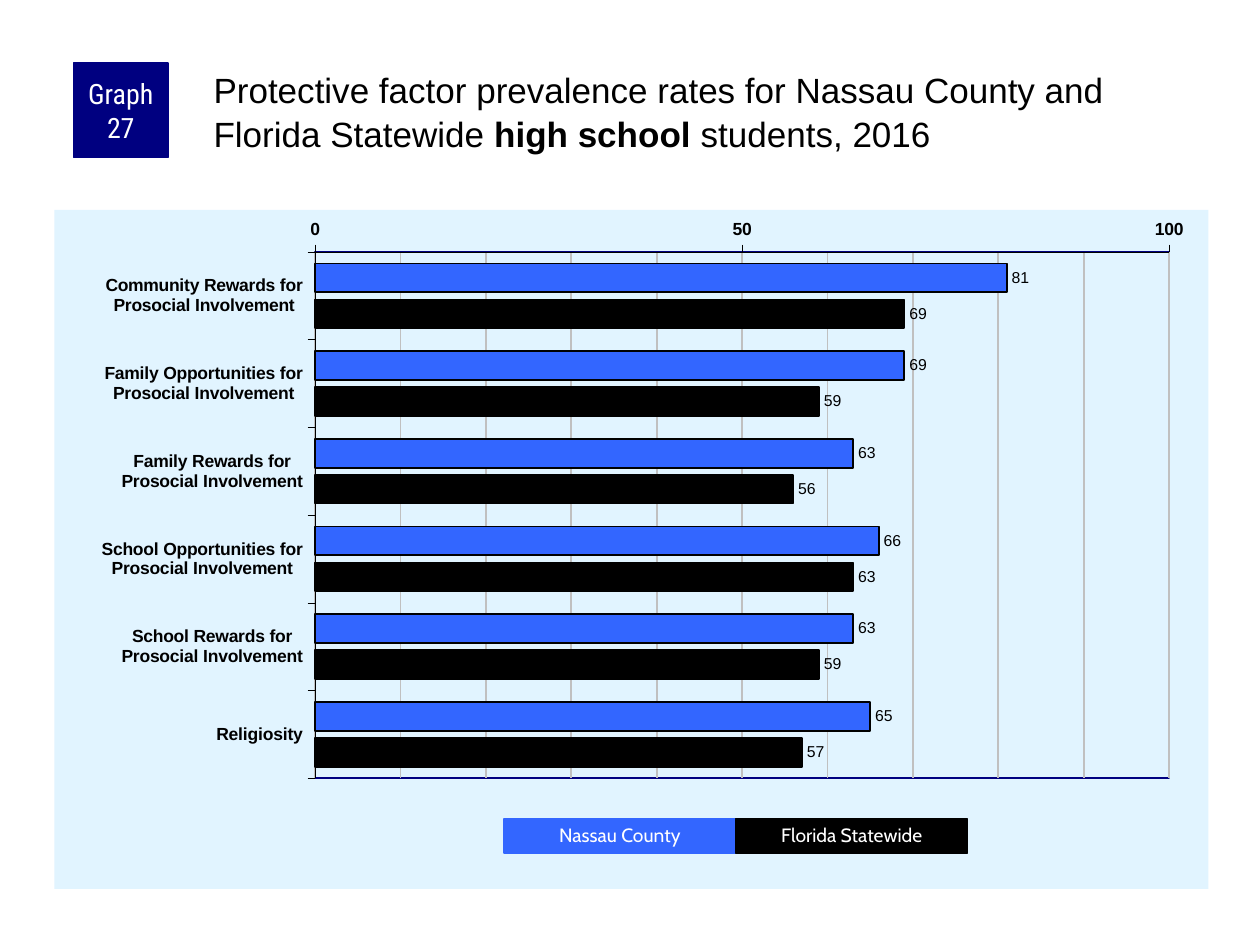
import copy
import pptx
import pptx.util
import pptx.oxml
import pptx.oxml.ns
import pptx.chart.data
import pptx.dml.color
import pptx.enum.chart
import pptx.enum.shapes
import pptx.enum.text
from dataclasses import dataclass

Pt = pptx.util.Pt
ALIGN = pptx.enum.text.PP_ALIGN
ANCHOR = pptx.enum.text.MSO_ANCHOR
CHART = pptx.enum.chart


@dataclass(frozen=True)
class Theme:
    navy: str = "000080"
    blue: str = "3366FF"
    black: str = "000000"
    white: str = "FFFFFF"
    panel: str = "E1F4FF"
    grid: str = "C0C0C0"
    body_font: str = "Arial"
    badge_font: str = "Roboto Condensed"
    legend_font: str = "Cabin"
    title_size: float = 20
    badge_size: float = 16
    legend_size: float = 11
    axis_size: float = 10
    label_size: float = 9


THEME = Theme()
CATEGORIES = [
    "Community Rewards for\nProsocial Involvement",
    "Family Opportunities for\nProsocial Involvement",
    "Family Rewards for\nProsocial Involvement",
    "School Opportunities for\nProsocial Involvement",
    "School Rewards for\nProsocial Involvement",
    "Religiosity",
]
SERIES = [
    ("Nassau County", THEME.blue, (81, 69, 63, 66, 63, 65)),
    ("Florida Statewide", THEME.black, (69, 59, 56, 63, 59, 57)),
]
PLOT = {"x": 0.226, "y": 0.062, "w": 0.74, "h": 0.775}  # shares of the chart box
C_NS = 'xmlns:c="http://schemas.openxmlformats.org/drawingml/2006/chart"'
A_NS = 'xmlns:a="http://schemas.openxmlformats.org/drawingml/2006/main"'


def rgb(color):
    return pptx.dml.color.RGBColor.from_string(color)


def set_values(target, values):
    for name, value in values.items():
        setattr(target, name, value)


def set_font(font, name, size, color, bold=False):
    set_values(font, {"name": name, "size": Pt(size), "bold": bold})
    font.color.rgb = rgb(color)


def set_fill(target, color):
    target.fill.solid()
    target.fill.fore_color.rgb = rgb(color)


def set_line(line, color, width):
    line.color.rgb = rgb(color)
    line.width = Pt(width)


def set_frame(frame, anchor, insets):
    values = dict(zip(("margin_left", "margin_top", "margin_right", "margin_bottom"), map(Pt, insets)))
    set_values(frame, {"word_wrap": True, "vertical_anchor": anchor, **values})


def add_title(slide, box, runs):
    title = slide.shapes.title
    set_values(title, dict(zip(("left", "top", "width", "height"), map(Pt, box))))
    set_frame(title.text_frame, ANCHOR.TOP, (2, 2, 0, 0))
    title.text_frame.auto_size = pptx.enum.text.MSO_AUTO_SIZE.NONE
    paragraph = title.text_frame.paragraphs[0]
    set_values(paragraph, {"alignment": ALIGN.LEFT, "line_spacing": 1.05})
    for text, bold in runs:
        run = paragraph.add_run()
        run.text = text
        set_font(run.font, THEME.body_font, THEME.title_size, THEME.black, bold)


def add_label_box(slide, box, text, fill, font, size, insets, line_spacing=1.0):
    """Add a filled rectangle with centred white text."""
    shape = slide.shapes.add_shape(pptx.enum.shapes.MSO_SHAPE.RECTANGLE, *map(Pt, box))
    shape.shadow.inherit = False
    set_fill(shape, fill)
    set_line(shape.line, fill, 0.75)
    set_frame(shape.text_frame, ANCHOR.MIDDLE, insets)
    paragraph = shape.text_frame.paragraphs[0]
    set_values(paragraph, {"text": text, "alignment": ALIGN.CENTER, "line_spacing": line_spacing})
    set_font(paragraph.runs[0].font, font, size, THEME.white)


def add_legend(slide, box):
    left, top, width, height = box
    key_width = width / len(SERIES)
    for index, (name, color, _) in enumerate(SERIES):
        key_box = (left + index * key_width, top, key_width, height)
        add_label_box(slide, key_box, name, color, THEME.legend_font, THEME.legend_size,
                      (7.2, 3.6, 7.2, 3.6), 0.9)


def set_chart_areas(chart):
    """Fill the chart panel, outline the plot and fix the plot's position."""
    chart_part = chart._chartSpace.chart
    chart_part.addnext(pptx.oxml.parse_xml(
        f'<c:spPr {C_NS} {A_NS}><a:solidFill><a:srgbClr val="{THEME.panel}"/></a:solidFill>'
        '<a:ln><a:noFill/></a:ln></c:spPr>'))
    plot_area = chart_part.plotArea
    for layout in plot_area.findall(pptx.oxml.ns.qn("c:layout")):
        plot_area.remove(layout)
    sizes = "".join(f'<c:{key} val="{value}"/>' for key, value in PLOT.items())
    plot_area.insert(0, pptx.oxml.parse_xml(
        f'<c:layout {C_NS}><c:manualLayout><c:layoutTarget val="inner"/>'
        f'<c:xMode val="edge"/><c:yMode val="edge"/>{sizes}</c:manualLayout></c:layout>'))
    plot_area.append(pptx.oxml.parse_xml(
        f'<c:spPr {C_NS} {A_NS}><a:noFill/><a:ln w="{Pt(1)}"><a:solidFill>'
        f'<a:srgbClr val="{THEME.navy}"/></a:solidFill></a:ln></c:spPr>'))


def format_axes(chart):
    category_axis, value_axis = chart.category_axis, chart.value_axis
    set_values(category_axis, {"reverse_order": True, "crosses": CHART.XL_AXIS_CROSSES.MAXIMUM,
                               "has_major_gridlines": False})
    set_values(value_axis, {"minimum_scale": 0, "maximum_scale": 100, "major_unit": 50,
                            "minor_unit": 10, "has_major_gridlines": True,
                            "has_minor_gridlines": True})
    set_line(value_axis.major_gridlines.format.line, THEME.grid, 1)
    major, minor = (value_axis._element.find(pptx.oxml.ns.qn(tag))
                    for tag in ("c:majorGridlines", "c:minorGridlines"))
    minor.append(copy.deepcopy(major.find(pptx.oxml.ns.qn("c:spPr"))))
    for axis in (category_axis, value_axis):
        set_values(axis, {"major_tick_mark": CHART.XL_TICK_MARK.OUTSIDE,
                          "minor_tick_mark": CHART.XL_TICK_MARK.NONE})
        set_line(axis.format.line, THEME.black, 0.25)
        set_font(axis.tick_labels.font, THEME.body_font, THEME.axis_size, THEME.black, True)


def add_prevalence_chart(slide, box):
    data = pptx.chart.data.CategoryChartData()
    data.categories = CATEGORIES
    for name, _, values in SERIES:
        data.add_series(name, values)
    chart = slide.shapes.add_chart(CHART.XL_CHART_TYPE.BAR_CLUSTERED, *map(Pt, box), data).chart
    set_values(chart, {"has_legend": False, "has_title": False})
    set_font(chart.font, THEME.body_font, THEME.axis_size, THEME.black)
    set_chart_areas(chart)
    format_axes(chart)
    plot = chart.plots[0]
    set_values(plot, {"gap_width": 80, "overlap": -25, "vary_by_categories": False})
    for series, (_, color, _) in zip(plot.series, SERIES):
        set_fill(series.format, color)
        set_line(series.format.line, THEME.black, 1)
        series.invert_if_negative = False
        labels = series.data_labels
        set_values(labels, {"show_value": True, "position": CHART.XL_LABEL_POSITION.OUTSIDE_END})
        set_font(labels.font, THEME.body_font, THEME.label_size, THEME.black)


def main():
    presentation = pptx.Presentation()
    set_values(presentation, {"slide_width": Pt(720), "slide_height": Pt(540)})
    slide = presentation.slides.add_slide(presentation.slide_layouts[5])
    add_prevalence_chart(slide, (31, 120, 659.5, 388))
    add_label_box(slide, (42, 36, 54, 54), "Graph 27", THEME.navy, THEME.badge_font,
                  THEME.badge_size, (3.6, 0, 3.6, 0))
    add_title(slide, (120, 36, 570, 60), [
        ("Protective factor prevalence rates for Nassau County and Florida Statewide ", False),
        ("high school ", True),
        ("students, 2016", False),
    ])
    add_legend(slide, (288, 468, 265, 19.5))
    presentation.save("out.pptx")


if __name__ == "__main__":
    main()
